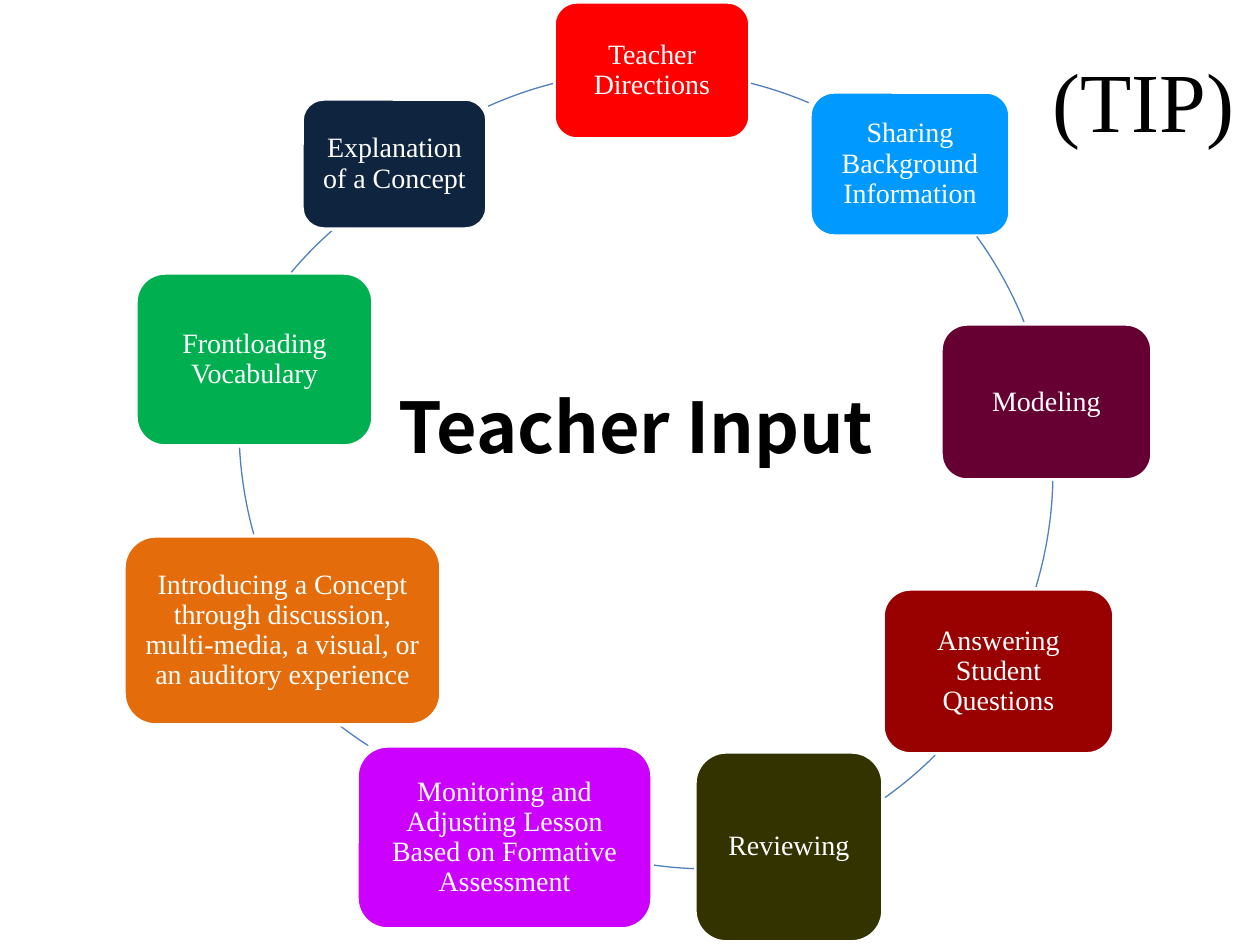
import math

import pptx
import pptx.dml.color
import pptx.enum.shapes
import pptx.enum.text
import pptx.util

PX = 914400 / 126
RING = 801  # diameter of the circle the arcs lie on
COLORS = {
    "white": "FFFFFF", "black": "000000", "arc": "4F81BD",
    "red": "FF0000", "blue": "0099FF", "plum": "660033",
    "maroon": "990000", "olive": "333300", "magenta": "CC00FF",
    "orange": "E46C0A", "green": "00B050", "navy": "0F243E",
}
SERIF = "Times New Roman"
SANS = "Noto Sans CJK KR"
MAIN_RING = (252, 71)

# text, fill, box (left, top, width, height)
STEPS = [
    ("Teacher Directions", "red", (554, 2, 196, 137)),
    ("Sharing Background Information", "blue", (810, 92, 200, 144)),
    ("Modeling", "plum", (941, 324, 211, 156)),
    ("Answering Student Questions", "maroon", (883, 589, 231, 165)),
    ("Reviewing", "olive", (695, 752, 188, 190)),
    ("Monitoring and Adjusting Lesson Based on Formative Assessment",
     "magenta", (357, 746, 295, 183)),
    ("Introducing a Concept through discussion, multi-media, a visual, "
     "or an auditory experience", "orange", (124, 536, 317, 189)),
    ("Frontloading Vocabulary", "green", (136, 273, 237, 173)),
    ("Explanation of a Concept", "navy", (302, 99, 185, 130)),
]

# ring corner, start point and end point of the arc after each step
ARCS = [
    (MAIN_RING, (751, 83), (809, 102)),
    (MAIN_RING, (976, 237), (1024, 323)),
    (MAIN_RING, (1052, 481), (1036, 588)),
    (MAIN_RING, (935, 755), (885, 798)),
    ((309, 68), (694, 869), (653, 866)),
    ((184, 8), (368, 746), (340, 726)),
    ((239, 26), (255, 534), (241, 447)),
    ((197, 130), (291, 272), (333, 229)),
    (MAIN_RING, (488, 106), (553, 83)),
]


def emu(px):
    return pptx.util.Emu(round(px * PX))


def rgb(name):
    return pptx.dml.color.RGBColor.from_string(COLORS[name])


class Deck:
    """Holds the presentation style and the current slide."""

    def __init__(self, width, height):
        self.prs = pptx.Presentation()
        self.prs.slide_width = emu(width)
        self.prs.slide_height = emu(height)
        self.s = self.prs.slides.add_slide(self.prs.slide_layouts[6])

    def shape(self, kind, box, line, weight):
        sp = self.s.shapes.add_shape(kind, *map(emu, box))
        sp.shadow.inherit = False
        sp.line.color.rgb = rgb(line)
        sp.line.width = pptx.util.Pt(weight)
        return sp

    def add_text(self, tf, text, size, font, color, align, bold=False):
        tf.word_wrap = True
        p = tf.paragraphs[0]
        p.alignment = align
        r = p.add_run()
        r.text = text
        r.font.size = pptx.util.Pt(size)
        r.font.name = font
        r.font.bold = bold
        r.font.color.rgb = rgb(color)
        return p

    def step(self, text, fill, box):
        sp = self.shape(pptx.enum.shapes.MSO_SHAPE.ROUNDED_RECTANGLE,
                        box, "white", 2)
        sp.fill.solid()
        sp.fill.fore_color.rgb = rgb(fill)
        tf = sp.text_frame
        tf.margin_left = tf.margin_right = emu(9)
        tf.margin_top = tf.margin_bottom = emu(9)
        tf.vertical_anchor = pptx.enum.text.MSO_ANCHOR.MIDDLE
        p = self.add_text(tf, text, 16, SERIF, "white",
                          pptx.enum.text.PP_ALIGN.CENTER)
        p.line_spacing = 0.9

    def arc(self, corner, start, end):
        """Draw the clockwise part of the ring from start to end."""
        sp = self.shape(pptx.enum.shapes.MSO_SHAPE.ARC,
                        (*corner, RING, RING), "arc", 0.75)
        sp.fill.background()
        cx, cy = (c + RING / 2 for c in corner)
        for i, (x, y) in enumerate((start, end)):
            angle = math.degrees(math.atan2(y - cy, x - cx)) % 360
            sp.adjustments[i] = angle * 0.6  # 60000 units a degree

    def label(self, text, box, size, font, align, anchor, bold=False):
        tf = self.s.shapes.add_textbox(*map(emu, box)).text_frame
        tf.vertical_anchor = anchor
        self.add_text(tf, text, size, font, "black", align, bold)


def main():
    align = pptx.enum.text.PP_ALIGN
    anchor = pptx.enum.text.MSO_ANCHOR
    deck = Deck(1260, 945)
    for step, arc in zip(STEPS, ARCS):
        deck.step(*step)
        deck.arc(*arc)
    deck.label("Teacher Input", (368, 347, 536, 157), 40, SANS,
               align.CENTER, anchor.MIDDLE, bold=True)
    deck.label("(TIP)", (1040, 42, 220, 115), 48, SERIF,
               align.LEFT, anchor.TOP)
    deck.prs.save("out.pptx")


if __name__ == "__main__":
    main()
